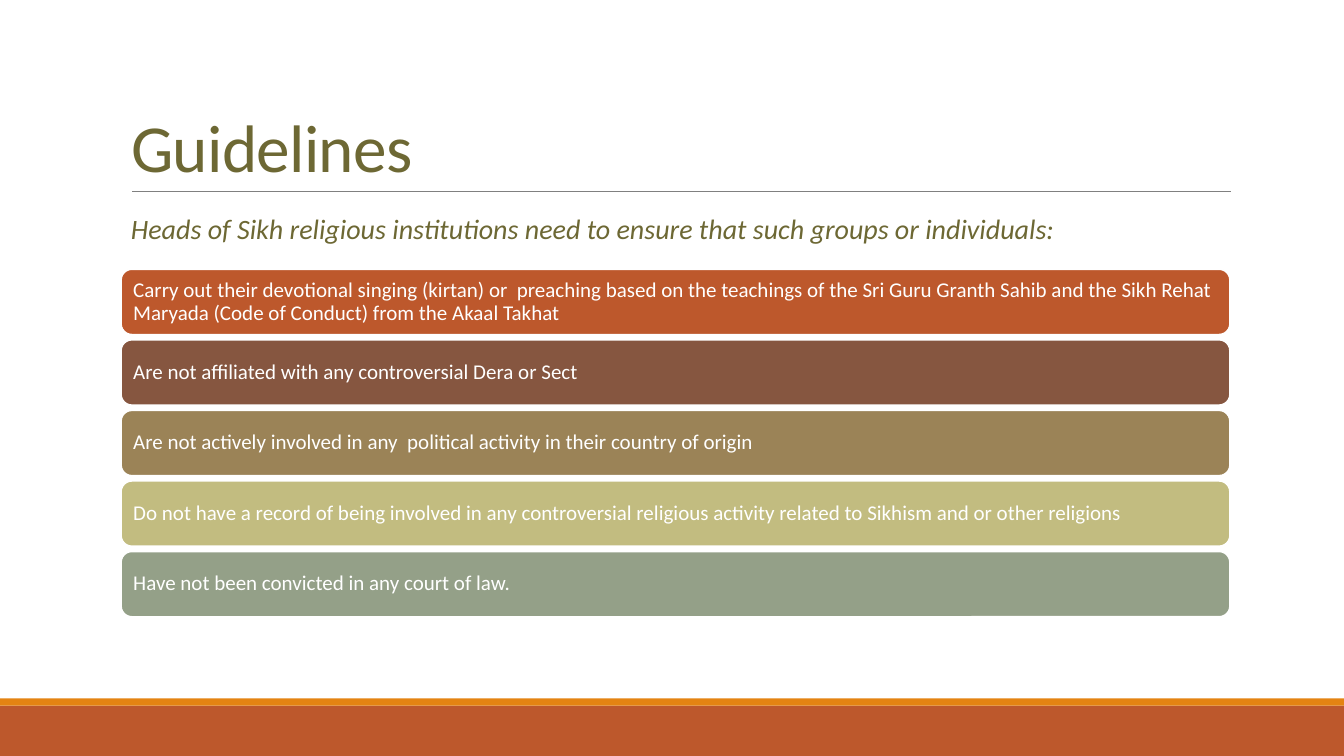
from dataclasses import dataclass

from lxml import etree
from pptx import Presentation
from pptx.dml.color import RGBColor
from pptx.enum.shapes import MSO_CONNECTOR, MSO_SHAPE
from pptx.enum.text import MSO_ANCHOR, PP_ALIGN
from pptx.oxml.ns import qn
from pptx.util import Inches, Pt

RECTANGLE = MSO_SHAPE.RECTANGLE
ROUNDED = MSO_SHAPE.ROUNDED_RECTANGLE
STRAIGHT = MSO_CONNECTOR.STRAIGHT
LEFT = PP_ALIGN.LEFT
TOP, MIDDLE, BOTTOM = MSO_ANCHOR.TOP, MSO_ANCHOR.MIDDLE, MSO_ANCHOR.BOTTOM
TITLE_ONLY = 5


@dataclass(frozen=True)
class Theme:
    font: str = "Calibri"
    heading: str = "6D6834"
    white: str = "FFFFFF"
    rule: str = "808080"
    footer: str = "BD582C"
    footer_edge: str = "E48312"
    title_size: float = 48
    lead_size: float = 20
    card_size: float = 15


class SlideBuilder:
    def __init__(self, slide, theme):
        self.slide = slide
        self.theme = theme

    def set_text(self, shape, text, size, color, anchor, margins=(0.1, 0.05),
                 line_spacing=1.0, italic=False):
        frame = shape.text_frame
        frame.word_wrap = True
        frame.vertical_anchor = anchor
        frame.margin_left = frame.margin_right = Inches(margins[0])
        frame.margin_top = frame.margin_bottom = Inches(margins[1])
        paragraph = frame.paragraphs[0]
        paragraph.alignment = LEFT
        paragraph.line_spacing = line_spacing
        run = paragraph.add_run()
        run.text = text
        run.font.name = self.theme.font
        run.font.size = Pt(size)
        run.font.italic = italic
        run.font.color.rgb = RGBColor.from_string(color)
        return run

    def title(self, text, left, top, width, height):
        shape = self.slide.shapes.title
        shape.left, shape.top = Inches(left), Inches(top)
        shape.width, shape.height = Inches(width), Inches(height)
        run = self.set_text(shape, text, self.theme.title_size, self.theme.heading,
                            BOTTOM, line_spacing=0.85)
        run.font._element.set("spc", "-50")

    def lead(self, text, left, top, width, height):
        box = self.slide.shapes.add_textbox(
            Inches(left), Inches(top), Inches(width), Inches(height))
        self.set_text(box, text, self.theme.lead_size, self.theme.heading, TOP,
                      italic=True)

    def block(self, kind, left, top, width, height, color):
        shape = self.slide.shapes.add_shape(
            kind, Inches(left), Inches(top), Inches(width), Inches(height))
        shape.shadow.inherit = False
        shape.fill.solid()
        shape.fill.fore_color.rgb = RGBColor.from_string(color)
        shape.line.fill.background()
        return shape

    def card(self, text, left, top, width, height, color):
        shape = self.block(ROUNDED, left, top, width, height, color)
        shape.line.color.rgb = RGBColor.from_string(self.theme.white)
        shape.line.width = Pt(1.25)
        self.set_text(shape, text, self.theme.card_size, self.theme.white, MIDDLE,
                      margins=(0.09, 0.06), line_spacing=0.9)

    def rule(self, left, right, y):
        line = self.slide.shapes.add_connector(
            STRAIGHT, Inches(left), Inches(y), Inches(right), Inches(y))
        line.line.color.rgb = RGBColor.from_string(self.theme.rule)
        line.line.width = Pt(0.5)
        etree.SubElement(line._element.spPr, qn("a:effectLst"))


GUIDELINES = [
    ("Carry out their devotional singing (kirtan) or  preaching based on the teachings "
     "of the Sri Guru Granth Sahib and the Sikh Rehat Maryada (Code of Conduct) "
     "from the Akaal Takhat", "BD582C"),
    ("Are not affiliated with any controversial Dera or Sect", "865640"),
    ("Are not actively involved in any  political activity in their country of origin",
     "9B8357"),
    ("Do not have a record of being involved in any controversial religious activity "
     "related to Sikhism and or other religions", "C2BC80"),
    ("Have not been convicted in any court of law.", "94A088"),
]
CONTENT_LEFT, CONTENT_WIDTH = 1.2, 11
CARD_TOP, CARD_HEIGHT, CARD_PITCH = 2.67, 0.65, 0.7


def main():
    presentation = Presentation()
    presentation.slide_width = Inches(13.33)
    presentation.slide_height = Inches(7.5)
    slide = presentation.slides.add_slide(presentation.slide_layouts[TITLE_ONLY])
    theme = Theme()
    builder = SlideBuilder(slide, theme)

    # Footer bands
    builder.block(RECTANGLE, 0, 7, 13.33, 0.5, theme.footer)
    builder.block(RECTANGLE, 0, 6.93, 13.33, 0.07, theme.footer_edge)

    # Heading
    builder.rule(1.31, 12.21, 1.9)
    builder.title("Guidelines", CONTENT_LEFT, 0.31, CONTENT_WIDTH, 1.59)
    builder.lead("Heads of Sikh religious institutions need to ensure that such groups "
                 "or individuals:", CONTENT_LEFT, 2.05, 9.67, 0.44)

    # Guideline cards
    for index, (text, color) in enumerate(GUIDELINES):
        builder.card(text, CONTENT_LEFT, CARD_TOP + index * CARD_PITCH,
                     CONTENT_WIDTH, CARD_HEIGHT, color)

    presentation.save("out.pptx")


if __name__ == "__main__":
    main()
